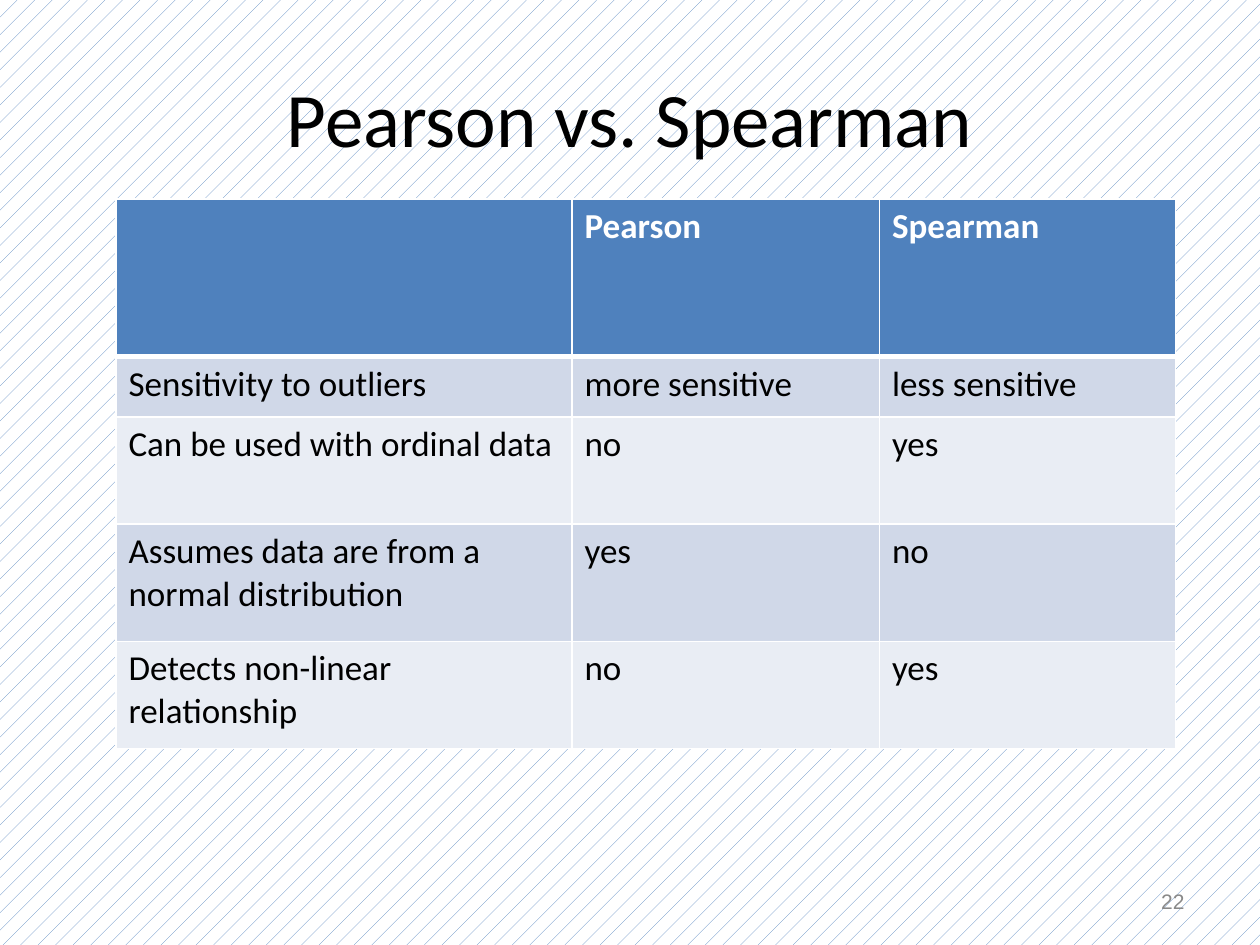
from dataclasses import dataclass

from lxml import etree
from pptx import Presentation
from pptx import util as u
from pptx.dml import color
from pptx.enum import dml, text
from pptx.oxml import ns
from pptx.slide import Slide

ROWS = [
    ("", "Pearson", "Spearman"),
    ("Sensitivity to outliers", "more sensitive", "less sensitive"),
    ("Can be used with ordinal data", "no", "yes"),
    ("Assumes data are from a normal distribution", "yes", "no"),
    ("Detects non-linear relationship", "no", "yes"),
]
COLUMN_WIDTHS = [3.62, 2.44, 2.35]
ROW_HEIGHTS = [1.25, 0.48, 0.85, 0.93, 0.85]


def rgb(value):
    return color.RGBColor.from_string(value)


def write(frame, words, size=20, font="Calibri", ink="000000", bold=False,
          align=text.PP_ALIGN.LEFT):
    para = frame.paragraphs[0]
    para.alignment = align
    span = para.add_run()
    span.text = words
    span.font.size = u.Pt(size)
    span.font.name = font
    span.font.bold = bold
    span.font.color.rgb = rgb(ink)


@dataclass
class ComparisonPage:
    """Holds the table style and the slide that its methods draw on."""

    page: Slide
    accent: str = "4F81BD"
    paper: str = "FFFFFF"
    bands: tuple = ("D0D8E8", "E9EDF4")

    def background(self):
        fill = self.page.background.fill
        fill.patterned()
        fill.pattern = dml.MSO_PATTERN.PERCENT_5
        fill.fore_color.rgb = rgb(self.accent)
        fill.back_color.rgb = rgb(self.paper)

    def label(self, words, place, **style):
        box = self.page.shapes.add_textbox(*map(u.Inches, place))
        box.text_frame.word_wrap = True
        box.text_frame.vertical_anchor = text.MSO_ANCHOR.MIDDLE
        write(box.text_frame, words, **style)

    def border(self, cell, side, points):
        properties = cell._tc.get_or_add_tcPr()
        line = etree.SubElement(properties, ns.qn(f"a:ln{side}"), w=str(u.Pt(points)))
        solid = etree.SubElement(line, ns.qn("a:solidFill"))
        etree.SubElement(solid, ns.qn("a:srgbClr"), val=self.paper)

    def cell(self, cell, words, row):
        header = row == 0
        widths = {"L": 1, "R": 1, "T": 3 if row == 1 else 1, "B": 3 if header else 1}
        for side, points in widths.items():
            self.border(cell, side, points)
        cell.fill.solid()
        cell.fill.fore_color.rgb = rgb(self.accent if header else self.bands[(row - 1) % 2])
        if words:
            write(cell.text_frame, words, bold=header,
                  ink=self.paper if header else "000000")

    def table(self, rows, left, top, widths, heights):
        place = map(u.Inches, (left, top, sum(widths), sum(heights)))
        table = self.page.shapes.add_table(len(rows), len(widths), *place).table
        for column, width in zip(table.columns, widths):
            column.width = u.Inches(width)
        for line, height in zip(table.rows, heights):
            line.height = u.Inches(height)
        for row, entries in enumerate(rows):
            for column, words in enumerate(entries):
                self.cell(table.cell(row, column), words, row)


def main():
    deck = Presentation()
    deck.slide_width, deck.slide_height = u.Inches(10), u.Inches(7.5)
    comparison = ComparisonPage(deck.slides.add_slide(deck.slide_layouts[6]))
    comparison.background()
    comparison.label("Pearson vs. Spearman", (0.5, 0.3, 9, 1.25), size=44,
                     align=text.PP_ALIGN.CENTER)
    comparison.label("22", (7.17, 6.95, 2.33, 0.4), size=12, font="Arial",
                     ink="898989", align=text.PP_ALIGN.RIGHT)
    comparison.table(ROWS, 0.92, 1.58, COLUMN_WIDTHS, ROW_HEIGHTS)
    deck.save("out.pptx")


if __name__ == "__main__":
    main()
